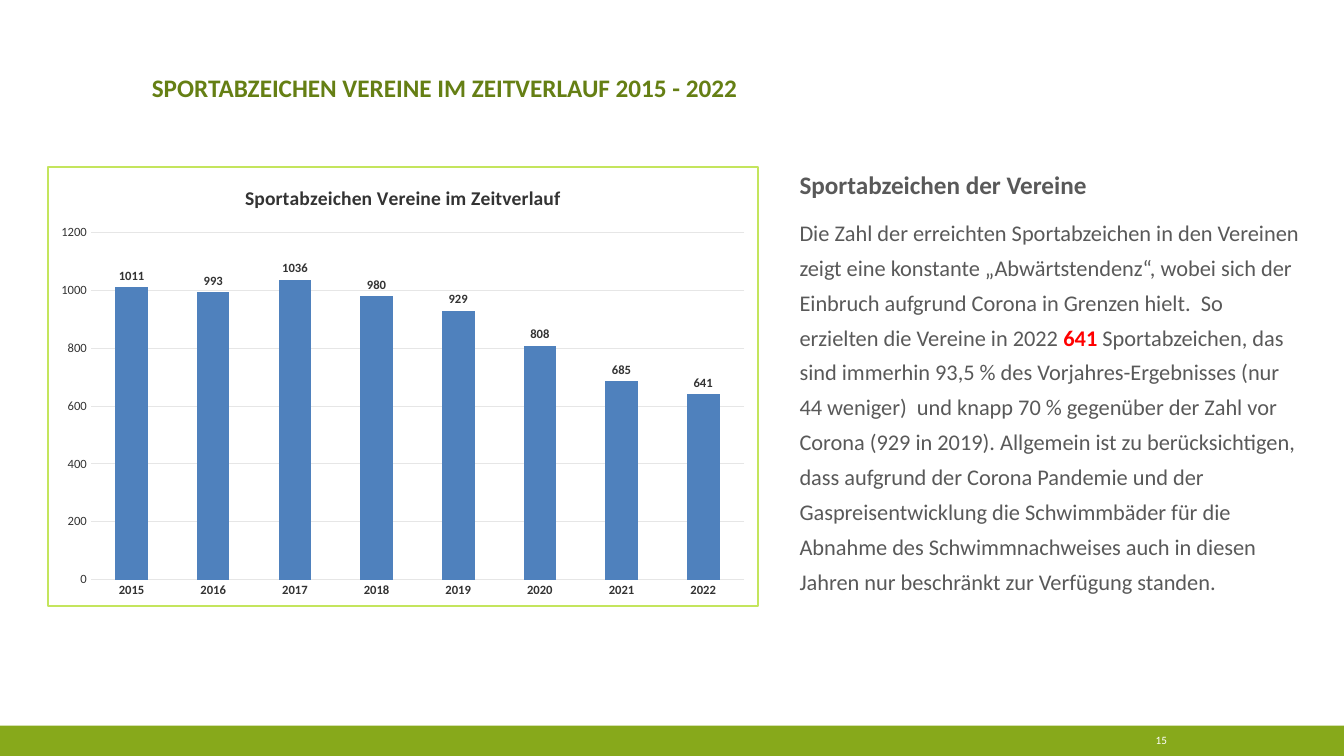
from lxml import etree
from pptx import Presentation
from pptx.chart.data import CategoryChartData
from pptx.dml.color import RGBColor
from pptx.enum.chart import XL_CHART_TYPE, XL_LABEL_POSITION, XL_TICK_MARK
from pptx.enum.shapes import MSO_SHAPE
from pptx.enum.text import MSO_ANCHOR, MSO_AUTO_SIZE, PP_ALIGN
from pptx.oxml import parse_xml
from pptx.oxml.ns import nsdecls, qn
from pptx.util import Pt

COLUMN = XL_CHART_TYPE.COLUMN_CLUSTERED
OUTSIDE = XL_LABEL_POSITION.OUTSIDE_END
NO_TICK = XL_TICK_MARK.NONE
RECT = MSO_SHAPE.RECTANGLE
BOTTOM, MIDDLE = MSO_ANCHOR.BOTTOM, MSO_ANCHOR.MIDDLE
LEFT, RIGHT = PP_ALIGN.LEFT, PP_ALIGN.RIGHT
NO_FIT = MSO_AUTO_SIZE.NONE

PX = 9525  # 96 px to the inch
WIDE, HIGH = 1280, 720
GREEN, GREY, DARK, WHITE = "87A91B", "595959", "333333", "FFFFFF"

YEARS = [str(year) for year in range(2015, 2023)]
BADGES = [1011, 993, 1036, 980, 929, 808, 685, 641]
TEXT = [
    ("Die Zahl der erreichten Sportabzeichen in den Vereinen zeigt eine "
     "konstante „Abwärtstendenz“, wobei sich der Einbruch aufgrund Corona in "
     "Grenzen hielt.  So erzielten die Vereine in 2022 ", GREY, False),
    ("641", "FF0000", True),
    (" Sportabzeichen, das sind immerhin 93,5 % des Vorjahres-Ergebnisses "
     "(nur 44 weniger)  und knapp 70 % gegenüber der Zahl vor Corona (929 in "
     "2019). Allgemein ist zu berücksichtigen, dass aufgrund der Corona "
     "Pandemie und der Gaspreisentwicklung die Schwimmbäder für die Abnahme "
     "des Schwimmnachweises auch in diesen Jahren nur beschränkt zur "
     "Verfügung standen.", GREY, False),
]


def color(code):
    return RGBColor.from_string(code)


def emu(box):
    return [n * PX for n in box]


def style(font, size, code, bold=False):
    font.name, font.size, font.bold = "Calibri", Pt(size), bold
    font.color.rgb = color(code)


def add_title(slide, box):
    title = slide.shapes.title
    title.left, title.top, title.width, title.height = emu(box)
    frame = title.text_frame
    frame.text = "SPORTABZEICHEN VEREINE IM ZEITVERLAUF 2015 - 2022"
    frame.auto_size, frame.vertical_anchor = NO_FIT, BOTTOM
    para = frame.paragraphs[0]
    para.alignment, para.line_spacing = LEFT, 0.9
    style(para.font, 18, "657F14", True)


def add_footer(slide, box):
    left, top, width, height = box
    bar = slide.shapes.add_shape(RECT, *emu(box))
    bar.shadow.inherit = False
    bar.fill.solid()
    bar.fill.fore_color.rgb = color(GREEN)
    bar.line.fill.background()
    # Page number
    note = slide.shapes.add_textbox(
        *emu((left + 1039, top + 2, 82, height - 5)))
    frame = note.text_frame
    frame.text, frame.word_wrap, frame.vertical_anchor = "15", True, MIDDLE
    frame.paragraphs[0].alignment = RIGHT
    style(frame.paragraphs[0].font, 8, WHITE)


def frame_chart(chart):
    # Plot position as shares of the chart
    plot = chart._chartSpace.chart.plotArea
    for old in plot.findall(qn("c:layout")):
        plot.remove(old)
    layout = parse_xml(f"<c:layout {nsdecls('c')}/>")
    manual = etree.SubElement(layout, qn("c:manualLayout"))
    for tag, value in (("layoutTarget", "inner"), ("xMode", "edge"),
                       ("yMode", "edge"), ("x", 0.06), ("y", 0.15),
                       ("w", 0.92), ("h", 0.79)):
        etree.SubElement(manual, qn(f"c:{tag}")).set("val", str(value))
    plot.insert(0, layout)
    # Background and border
    chart._chartSpace.chart.addnext(parse_xml(
        f"<c:spPr {nsdecls('c', 'a')}>"
        f'<a:solidFill><a:srgbClr val="{WHITE}"/></a:solidFill>'
        f'<a:ln w="{Pt(1.25)}"><a:solidFill><a:srgbClr val="C4E55D"/>'
        "</a:solidFill></a:ln></c:spPr>"))


def add_columns(slide, box):
    data = CategoryChartData()
    data.categories = YEARS
    data.add_series("Sportabzeichen", BADGES)
    chart = slide.shapes.add_chart(COLUMN, *emu(box), data).chart
    style(chart.font, 10, "000000")
    chart.has_legend = False
    # Chart title
    chart.has_title = True
    head = chart.chart_title
    head.include_in_layout = False
    head.text_frame.text = "Sportabzeichen Vereine im Zeitverlauf"
    style(head.text_frame.paragraphs[0].font, 14, DARK, True)
    # Axes
    for axis, bold in ((chart.category_axis, True), (chart.value_axis, False)):
        axis.major_tick_mark = axis.minor_tick_mark = NO_TICK
        axis.format.line.fill.background()
        style(axis.tick_labels.font, 9, DARK, bold)
    scale = chart.value_axis
    scale.minimum_scale, scale.maximum_scale, scale.major_unit = 0, 1200, 200
    grid = scale.major_gridlines.format.line
    grid.width, grid.color.rgb = Pt(0.75), color("E6E6E6")
    # Columns and labels
    plot = chart.plots[0]
    plot.gap_width, plot.vary_by_categories = 150, False
    fill = plot.series[0].format.fill
    fill.solid()
    fill.fore_color.rgb = color("4F81BD")
    plot.has_data_labels = True
    labels = plot.data_labels
    labels.show_value, labels.position = True, OUTSIDE
    style(labels.font, 9, DARK, True)
    frame_chart(chart)


def add_text(slide, box):
    frame = slide.shapes.add_textbox(*emu(box)).text_frame
    frame.word_wrap = True
    head, body = frame.paragraphs[0], frame.add_paragraph()
    for para in (head, body):
        para.line_spacing, para.space_after = 1.3, Pt(8)
    head.text = "Sportabzeichen der Vereine"
    style(head.font, 18, GREY, True)
    for words, code, bold in TEXT:
        run = body.add_run()
        run.text = words
        style(run.font, 16, code, bold)


def main():
    deck = Presentation()
    deck.slide_width, deck.slide_height = WIDE * PX, HIGH * PX
    slide = deck.slides.add_slide(deck.slide_layouts[5])
    add_footer(slide, (0, 691, WIDE, 29))
    add_title(slide, (135, 51, 616, 52))
    add_columns(slide, (45, 158, 678, 420))
    add_text(slide, (752, 148, 500, 425))
    deck.save("out.pptx")


if __name__ == "__main__":
    main()
